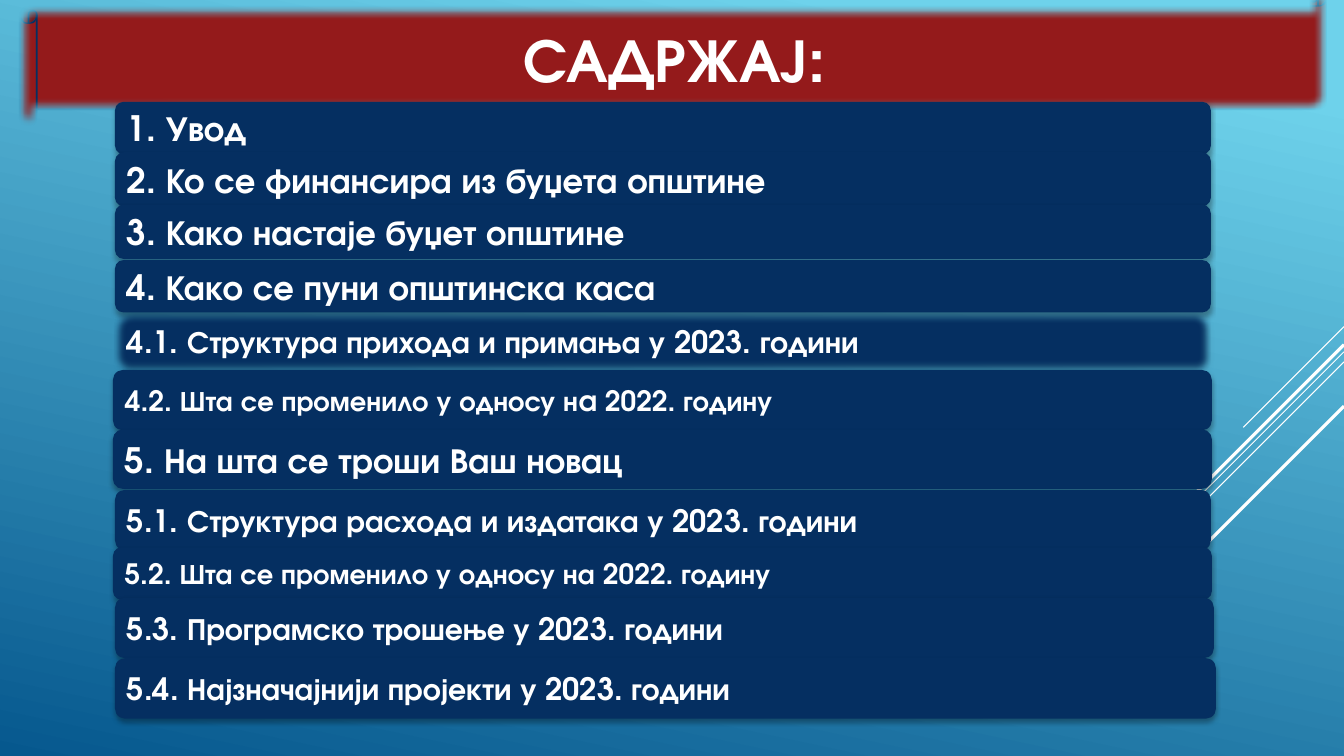
from lxml.etree import SubElement
from pptx import Presentation
from pptx.dml.color import RGBColor
from pptx.enum.shapes import MSO_CONNECTOR, MSO_SHAPE
from pptx.enum.text import MSO_ANCHOR, MSO_AUTO_SIZE, PP_ALIGN
from pptx.oxml.ns import qn
from pptx.util import Pt

PX = 9144  # 100 px to the inch
FONT = "TeX Gyre Adventor"
NAVY, RED, WHITE = "052F61", "941A1B", "FFFFFF"
FRAME = dict(word_wrap=True, auto_size=MSO_AUTO_SIZE.NONE,
             vertical_anchor=MSO_ANCHOR.MIDDLE, margin_left=9 * PX,
             margin_right=9 * PX, margin_top=0, margin_bottom=0)

# start x, start y, run to the lower left, width in points
RAYS = [(1333, 324, 100, 0.75), (1333, 349, 326, 0.75), (1333, 359, 207, 0.75),
        (1333, 342, 191, 2.25), (1333, 403, 139, 2.25)]

# left, top, width, height, text size, text
ROWS = [
    (114, 101, 1087, 52, 25, "1. Увод"),
    (114, 151, 1087, 54, 25, "2. Ко се финансира из буџета општине"),
    (114, 203, 1087, 54, 25, "3. Како настаје буџет општине"),
    (114, 258, 1087, 52, 25, "4. Како се пуни општинска каса"),
    (114, 309, 1087, 60, 22, "4.1. Структура прихода и примања у 2023. години"),
    (112, 367, 1090, 60, 20, "4.2. Шта се променило у односу нa 2022. годину"),
    (112, 426, 1090, 59, 25, "5. На шта се троши Ваш новац"),
    (114, 486, 1087, 60, 22, "5.1. Структура расхода и издатака у 2023. години"),
    (112, 543, 1090, 52, 20, "5.2. Шта се променило у односу на 2022. годину"),
    (114, 593, 1090, 60, 22, "5.3. Програмско трошење у 2023. години"),
    (114, 653, 1092, 60, 22, "5.4. Најзначајнији пројекти у 2023. години"),
]
SOFT_ROW = 4


def paint(color, code):
    color.rgb = RGBColor.from_string(code)


def put(target, values):
    """Set each named value as an attribute of the target."""
    for name, value in values.items():
        setattr(target, name, value)


def write(shape, text, size, align):
    frame = shape.text_frame
    put(frame, FRAME)
    para = frame.paragraphs[0]
    para.alignment = align
    run = para.add_run()
    run.text = text
    put(run.font, dict(name=FONT, size=Pt(size), bold=True))
    paint(run.font.color, WHITE)


def add_box(slide, kind, box, fill):
    shape = slide.shapes.add_shape(kind, *(n * PX for n in box))
    shape.fill.solid()
    paint(shape.fill.fore_color, fill)
    shape.shadow.inherit = False
    return shape


def effects(shape):
    return shape.element.spPr.find(qn("a:effectLst"))


def shade(shape):
    """Cast a faint shadow straight down."""
    drop = SubElement(effects(shape), qn("a:outerShdw"), blurRad=str(Pt(3.5)),
                      dist=str(Pt(2.2)), dir="5400000", algn="ctr", rotWithShape="0")
    color = SubElement(drop, qn("a:srgbClr"), val="000000")
    SubElement(color, qn("a:alpha"), val="32000")


def soften(shape):
    """Blur the edge of the shape."""
    SubElement(effects(shape), qn("a:softEdge"), rad=str(Pt(5)))


def add_back(slide):
    fill = slide.background.fill
    fill.gradient()
    fill.gradient_angle = 258
    for stop, place, code in zip(fill.gradient_stops, (0.1, 1), ("6ED2EB", "06588E")):
        stop.position = place
        paint(stop.color, code)


def add_rays(slide):
    for x, y, run, width in RAYS:
        ends = (x, y, x - run, y + run)
        ray = slide.shapes.add_connector(MSO_CONNECTOR.STRAIGHT, *(n * PX for n in ends))
        ray.line.width = Pt(width)
        paint(ray.line.color, WHITE)
        SubElement(ray.element.spPr, qn("a:effectLst"))


def add_title(slide, box):
    banner = add_box(slide, MSO_SHAPE.HORIZONTAL_SCROLL, box, RED)
    banner.line.width = Pt(1.25)
    paint(banner.line.color, NAVY)
    soften(banner)
    left, top, width, height = box
    title = slide.shapes.title
    put(title, dict(left=(left + 10) * PX, top=(top + 28) * PX,
                    width=(width - 16) * PX, height=(height - 56) * PX))
    write(title, "САДРЖАЈ:", 44, PP_ALIGN.CENTER)
    banner.element.addnext(title.element)


def add_row(slide, box, size, text, soft):
    row = add_box(slide, MSO_SHAPE.ROUNDED_RECTANGLE, box, NAVY)
    row.line.fill.background()
    shade(row)
    if soft:
        soften(row)
    write(row, text, size, PP_ALIGN.LEFT)


def main():
    deck = Presentation()
    put(deck, dict(slide_width=1333 * PX, slide_height=750 * PX))
    slide = deck.slides.add_slide(deck.slide_layouts[5])
    add_back(slide)
    add_rays(slide)
    add_title(slide, (19, -11, 1296, 136))
    for i, (*box, size, text) in enumerate(ROWS):
        add_row(slide, box, size, text, i == SOFT_ROW)
    deck.save("out.pptx")


if __name__ == "__main__":
    main()
